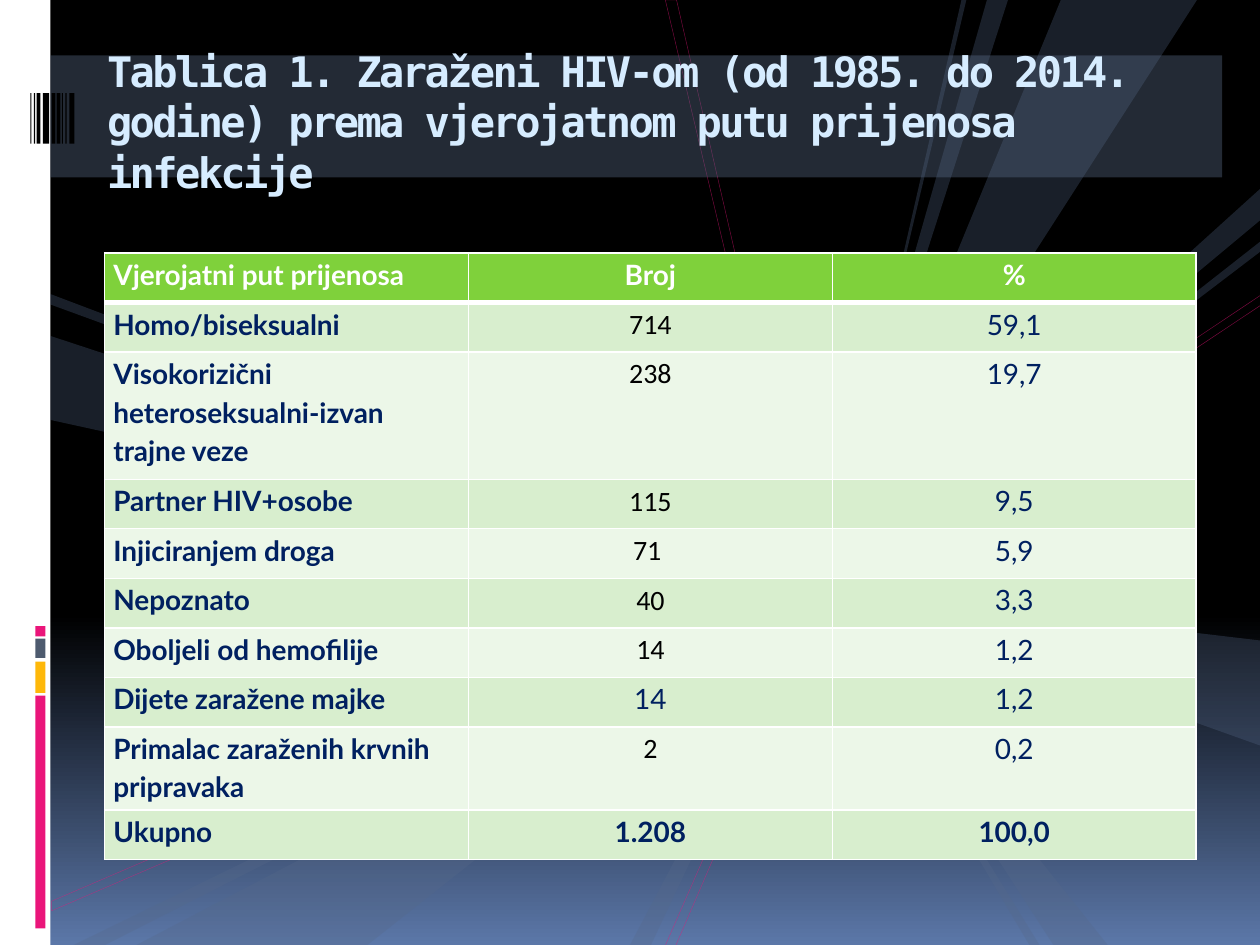
from lxml import etree
from pptx import Presentation
from pptx import util as u
from pptx.dml import color
from pptx.enum import shapes, text
from pptx.oxml import ns

Pt = u.Pt
NAVY, BLACK, WHITE, PINK, SLATE = "002060", "000000", "FFFFFF", "EA157A", "566989"


def rgb(value):
    return color.RGBColor.from_string(value)


def apply(target, values):
    for name, value in values.items():
        setattr(target, name, value)


def child(parent, tag, **attributes):
    return etree.SubElement(parent, ns.qn(tag), attributes)


class Deck:
    heading = {"name": "DejaVu Sans Mono", "size": Pt(24), "bold": True}
    body = {"name": "Lato", "size": Pt(16)}

    def __init__(self, width, height):
        self.file = Presentation()
        apply(self.file, {"slide_width": Pt(width), "slide_height": Pt(height)})
        self.page = None

    def add_page(self, top, bottom, turn):
        self.page = self.file.slides.add_slide(self.file.slide_layouts[5])
        fill = self.page.background.fill
        fill.gradient()
        fill.gradient_angle = 270
        for stop, shade, position in zip(fill.gradient_stops, (top, bottom), (turn, 1)):
            stop.color.rgb = rgb(shade)
            stop.position = position

    def paint(self, target, shade, opacity=100):
        target.solid()
        target.fore_color.rgb = rgb(shade)
        if opacity < 100:
            for node in target._xPr.iter(ns.qn("a:srgbClr")):
                child(node, "a:alpha", val=str(opacity * 1000))

    def bar(self, left, top, width, height, shade, opacity=100):
        shape = self.page.shapes.add_shape(
            shapes.MSO_SHAPE.RECTANGLE, Pt(left), Pt(top), Pt(width), Pt(height))
        shape.shadow.inherit = False
        self.paint(shape.fill, shade, opacity)
        shape.line.fill.background()

    def outline(self, points):
        first, *rest = [(Pt(x), Pt(y)) for x, y in points]
        builder = self.page.shapes.build_freeform(*first)
        builder.add_line_segments(rest, close=True)
        shape = builder.convert_to_shape()
        shape.shadow.inherit = False
        return shape

    def ray(self, points, shade, opacity):
        shape = self.outline(points)
        self.paint(shape.fill, shade, opacity)
        shape.line.fill.background()

    def thread(self, points, shade, opacity):
        shape = self.outline(points)
        shape.fill.background()
        shape.line.width = Pt(0.25)
        self.paint(shape.line.fill, shade, opacity)

    def title(self, words, left, top, width, height, shade):
        box = self.page.shapes.title
        self.page.shapes._spTree.append(box._element)
        apply(box, {"left": Pt(left), "top": Pt(top),
                    "width": Pt(width), "height": Pt(height)})
        apply(box.text_frame, {
            "margin_left": Pt(7.2), "margin_right": Pt(7.2),
            "margin_top": Pt(5), "margin_bottom": Pt(3.6), "word_wrap": True,
            "auto_size": text.MSO_AUTO_SIZE.NONE,
            "vertical_anchor": text.MSO_ANCHOR.TOP})
        para = box.text_frame.paragraphs[0]
        para.alignment = text.PP_ALIGN.LEFT
        span = para.add_run()
        span.text = words
        apply(span.font, self.heading)
        span.font.color.rgb = rgb(shade)
        span._r.get_or_add_rPr().set("spc", "-150")

    def borders(self, cell, widths):
        properties = cell._tc.get_or_add_tcPr()
        for side, width in zip("LRTB", widths):
            line = child(properties, "a:ln" + side, w=str(Pt(width)))
            child(child(line, "a:solidFill"), "a:srgbClr", val=WHITE)

    def cell(self, cell, words, font, shade, fill, centred, widths):
        self.borders(cell, widths)
        self.paint(cell.fill, fill)
        apply(cell, {"margin_left": Pt(5), "margin_right": Pt(5),
                     "margin_top": 0, "margin_bottom": 0})
        para = cell.text_frame.paragraphs[0]
        apply(para, {"line_spacing": 1.15, "space_after": Pt(10),
                     "alignment": text.PP_ALIGN.CENTER if centred else text.PP_ALIGN.LEFT})
        span = para.add_run()
        span.text = words
        apply(span.font, {**self.body, **font})
        span.font.color.rgb = rgb(shade)

    def table(self, left, top, width, heights, rows):
        table = self.page.shapes.add_table(
            len(rows), len(rows[0]), Pt(left), Pt(top), Pt(width), Pt(sum(heights))).table
        for row, height in zip(table.rows, heights):
            row.height = Pt(height)
        last = len(rows) - 1
        for i, row in enumerate(rows):
            fill = "7FD13B" if i == 0 else ("D8EECE" if i % 2 else "ECF7E8")
            widths = (1, 1, 3 if i == 1 else 1, 3 if i == 0 else 1)
            for j, words in enumerate(row):
                font = {"bold": j == 0 or i in (0, last)}
                shade = NAVY if i else WHITE
                if j == 1 and i not in (0, 7, last):
                    font["name"], shade = "Calibri", BLACK
                self.cell(table.cell(i, j), words, font, shade, fill, j > 0, widths)


def main():
    deck = Deck(720, 540)
    deck.add_page(BLACK, "5B77A8", 0.65)

    deck.bar(0, 0, 28.8, 540, WHITE)
    for top, height, shade in [(397.5, 133, PINK), (378, 18, "FEB80A"),
                               (365, 11, "4E5B6F"), (357.8, 5.8, PINK)]:
        deck.bar(20.2, top, 5.8, height, shade)

    threads = [
        [(380, 540.7), (469.5, 336.3), (720.7, 168.5), (720.7, 174.3),
         (473, 339), (386, 540.7)],
        [(29.5, 515), (29.5, 520.5), (463.7, 333.5), (386.6, 0),
         (380.2, 0), (458.6, 330.5)],
    ]
    for points in threads:
        deck.thread(points, PINK, 53)

    centre = (468, 336)
    rays = [
        ((552.2, 0), (549.4, 0), (474.5, 327.6)),
        ((606.2, 0), (684, 0), centre),
        ((720, 366), (720, 426), centre),
        ((576, 0), (564, 0), centre),
        ((602, 540), (633, 540), (468.7, 334)),
        ((594, 540), (588.2, 540), centre),
        ((720, 108), (720, 126), centre),
        ((720, 138.2), (720, 144), centre),
        ((78, 540), (210, 540), centre),
        ((42, 540), (60, 540), (462, 336)),
        ((28.8, 192), (28.8, 240), (466.6, 336)),
        ((28.8, 168), (28.8, 174), (473, 336)),
        ((360, 540), (372, 540), centre),
    ]
    for points in rays:
        deck.ray(points, SLATE, 30)

    deck.bar(28.8, 31.7, 669.6, 69.8, "586A86", 40)
    for left, width in [(17.3, 0.7), (19.4, 0.7), (20.9, 2.2), (24.5, 3.6), (29.5, 2.2),
                        (32.4, 2.2), (35.3, 0.7), (37.4, 0.7), (39.6, 2.9)]:
        deck.bar(left, 53.3, width, 28.8, BLACK)

    deck.title("Tablica 1. Zaraženi HIV-om (od 1985. do 2014. godine) "
               "prema vjerojatnom putu prijenosa infekcije", 54, 21, 642, 67.7, "D6ECFF")

    rows = [
        ("Vjerojatni put prijenosa", "Broj", "%"),
        ("Homo/biseksualni", "714", "59,1"),
        ("Visokorizični heteroseksualni-izvan trajne veze", "238", "19,7"),
        ("Partner HIV+osobe", "115", "9,5"),
        ("Injiciranjem droga", "71 ", "5,9"),
        ("Nepoznato", "40", "3,3"),
        ("Oboljeli od hemofilije", "14", "1,2"),
        ("Dijete zaražene majke", "14", "1,2"),
        ("Primalac zaraženih krvnih pripravaka", "2", "0,2"),
        ("Ukupno", "1.208", "100,0"),
    ]
    heights = [28.3] * len(rows)
    heights[2], heights[8] = 72.7, 47.6
    deck.table(59.8, 144.6, 623.7, heights, rows)
    deck.file.save("out.pptx")


if __name__ == "__main__":
    main()
